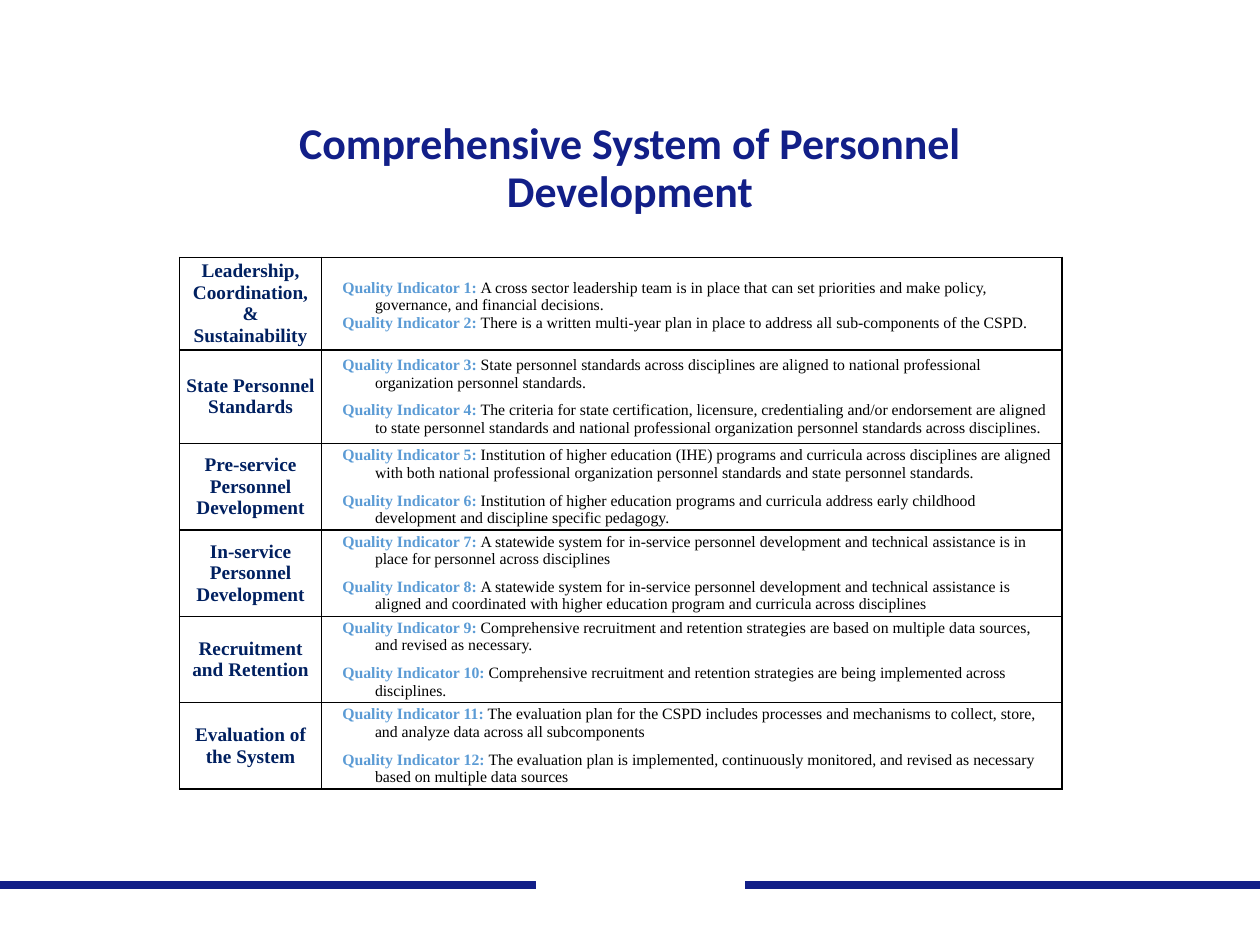
from lxml import etree
from pptx import Presentation
from pptx.dml.color import RGBColor
from pptx.enum.shapes import MSO_CONNECTOR
from pptx.enum.text import MSO_ANCHOR, PP_ALIGN
from pptx.oxml.ns import qn
from pptx.util import Pt

CENTER, LEFT = PP_ALIGN.CENTER, PP_ALIGN.LEFT
MIDDLE = MSO_ANCHOR.MIDDLE
STRAIGHT = MSO_CONNECTOR.STRAIGHT

COLORS = {
    "navy": "121F88",
    "component": "002060",
    "indicator": "5B9BD5",
    "black": "000000",
    "white": "FFFFFF",
}
TITLE_FONT, TABLE_FONT = "Calibri", "Times New Roman"

TITLE = "Comprehensive System of Personnel Development"

# Component, row height, space around each indicator, its indicators
COMPONENTS = [
    ("Leadership, Coordination, & Sustainability", 49.2, 0, [
        "A cross sector leadership team is in place that can set priorities and make policy, "
        "governance, and financial decisions.",
        "There is a written multi-year plan in place to address all sub-components of the CSPD.",
    ]),
    ("State Personnel Standards", 53.6, 3, [
        "State personnel standards across disciplines are aligned to national professional "
        "organization personnel standards.",
        "The criteria for state certification, licensure, credentialing and/or endorsement are "
        "aligned to state personnel standards and national professional organization personnel "
        "standards across disciplines.",
    ]),
    ("Pre-service Personnel Development", 47.7, 3, [
        "Institution of higher education (IHE) programs and curricula across disciplines are "
        "aligned with both national professional organization personnel standards and state "
        "personnel standards.",
        "Institution of higher education programs and curricula address early childhood "
        "development and discipline specific pedagogy.",
    ]),
    ("In-service Personnel Development", 47.7, 3, [
        "A statewide system for in-service personnel development and technical assistance is in "
        "place for personnel across disciplines",
        "A statewide system for in-service personnel development and technical assistance is "
        "aligned and coordinated with higher education program and curricula across disciplines",
    ]),
    ("Recruitment and Retention", 47.7, 3, [
        "Comprehensive recruitment and retention strategies are based on multiple data sources, "
        "and revised as necessary.",
        "Comprehensive recruitment and retention strategies are being implemented across "
        "disciplines.",
    ]),
    ("Evaluation of the System", 47.7, 3, [
        "The evaluation plan for the CSPD includes processes and mechanisms to collect, store, "
        "and analyze data across all subcomponents",
        "The evaluation plan is implemented, continuously monitored, and revised as necessary "
        "based on multiple data sources",
    ]),
]

SLIDE_WIDTH, SLIDE_HEIGHT = 720, 540
TABLE_LEFT, TABLE_TOP = 102.7, 147
COLUMN_WIDTHS = [81, 423.3]
CELL_INSET = 3.6
HANGING_LEFT, HANGING_INDENT = 27, -18.72
FOOTER_Y = 505.5
FOOTER_LINES = [(0, SLIDE_WIDTH, "navy"), (306, 425.6, "white")]


def add_run(paragraph, text, font_name, size, color, bold=True):
    run = paragraph.add_run()
    run.text = text
    run.font.name = font_name
    run.font.size = Pt(size)
    run.font.bold = bold
    run.font.color.rgb = RGBColor.from_string(COLORS[color])


def add_footer_line(slide, start, end, color):
    line = slide.shapes.add_connector(STRAIGHT, Pt(start), Pt(FOOTER_Y), Pt(end), Pt(FOOTER_Y))
    line.line.color.rgb = RGBColor.from_string(COLORS[color])
    line.line.width = Pt(4.5)
    etree.SubElement(line._element.spPr, qn("a:effectLst"))


def add_title(slide):
    box = slide.shapes.add_textbox(Pt(90), Pt(63), Pt(540), Pt(67.7))
    frame = box.text_frame
    frame.word_wrap = True
    frame.margin_left = frame.margin_right = Pt(12)
    frame.vertical_anchor = MIDDLE
    paragraph = frame.paragraphs[0]
    paragraph.alignment = CENTER
    paragraph.line_spacing = 0.9
    add_run(paragraph, TITLE, TITLE_FONT, 25.1, "navy")


def style_cell(cell):
    """Set insets, anchor and one-point borders, with the fill after the borders."""
    cell.margin_left = cell.margin_right = Pt(CELL_INSET)
    cell.margin_top = cell.margin_bottom = 0
    cell.vertical_anchor = MIDDLE
    properties = cell._tc.get_or_add_tcPr()
    for side in ("a:lnL", "a:lnR", "a:lnT", "a:lnB"):
        border = etree.SubElement(properties, qn(side), w=str(Pt(1)))
        fill = etree.SubElement(border, qn("a:solidFill"))
        etree.SubElement(fill, qn("a:srgbClr"), val=COLORS["black"])
    cell.fill.background()


def fill_indicators(cell, indicators, first_number, spacing):
    """Write numbered indicators, with space only between them."""
    frame = cell.text_frame
    for position, statement in enumerate(indicators):
        paragraph = frame.add_paragraph() if position else frame.paragraphs[0]
        properties = paragraph._p.get_or_add_pPr()
        properties.set("marL", str(Pt(HANGING_LEFT)))
        properties.set("indent", str(Pt(HANGING_INDENT)))
        paragraph.alignment = LEFT
        is_last = position == len(indicators) - 1
        paragraph.space_before = Pt(spacing if position else 0)
        paragraph.space_after = Pt(0 if is_last else spacing)
        label = f"Quality Indicator {first_number + position}: "
        add_run(paragraph, label, TABLE_FONT, 9, "indicator")
        add_run(paragraph, statement, TABLE_FONT, 9, "black", bold=False)


def add_components_table(slide):
    height = sum(component[1] for component in COMPONENTS)
    table = slide.shapes.add_table(
        len(COMPONENTS), len(COLUMN_WIDTHS), Pt(TABLE_LEFT), Pt(TABLE_TOP),
        Pt(sum(COLUMN_WIDTHS)), Pt(height)).table
    table.first_row = table.horz_banding = False
    for column, width in zip(table.columns, COLUMN_WIDTHS):
        column.width = Pt(width)

    number = 1
    for index, (name, row_height, spacing, indicators) in enumerate(COMPONENTS):
        table.rows[index].height = Pt(row_height)
        name_cell, indicator_cell = table.cell(index, 0), table.cell(index, 1)
        style_cell(name_cell)
        style_cell(indicator_cell)
        paragraph = name_cell.text_frame.paragraphs[0]
        paragraph.alignment = CENTER
        add_run(paragraph, name, TABLE_FONT, 11, "component")
        fill_indicators(indicator_cell, indicators, number, spacing)
        number += len(indicators)
    table.cell(0, 1).margin_top = Pt(2.3)


def main():
    presentation = Presentation()
    presentation.slide_width = Pt(SLIDE_WIDTH)
    presentation.slide_height = Pt(SLIDE_HEIGHT)
    slide = presentation.slides.add_slide(presentation.slide_layouts[6])
    for start, end, color in FOOTER_LINES:
        add_footer_line(slide, start, end, color)
    add_title(slide)
    add_components_table(slide)
    presentation.save("out.pptx")


if __name__ == "__main__":
    main()
